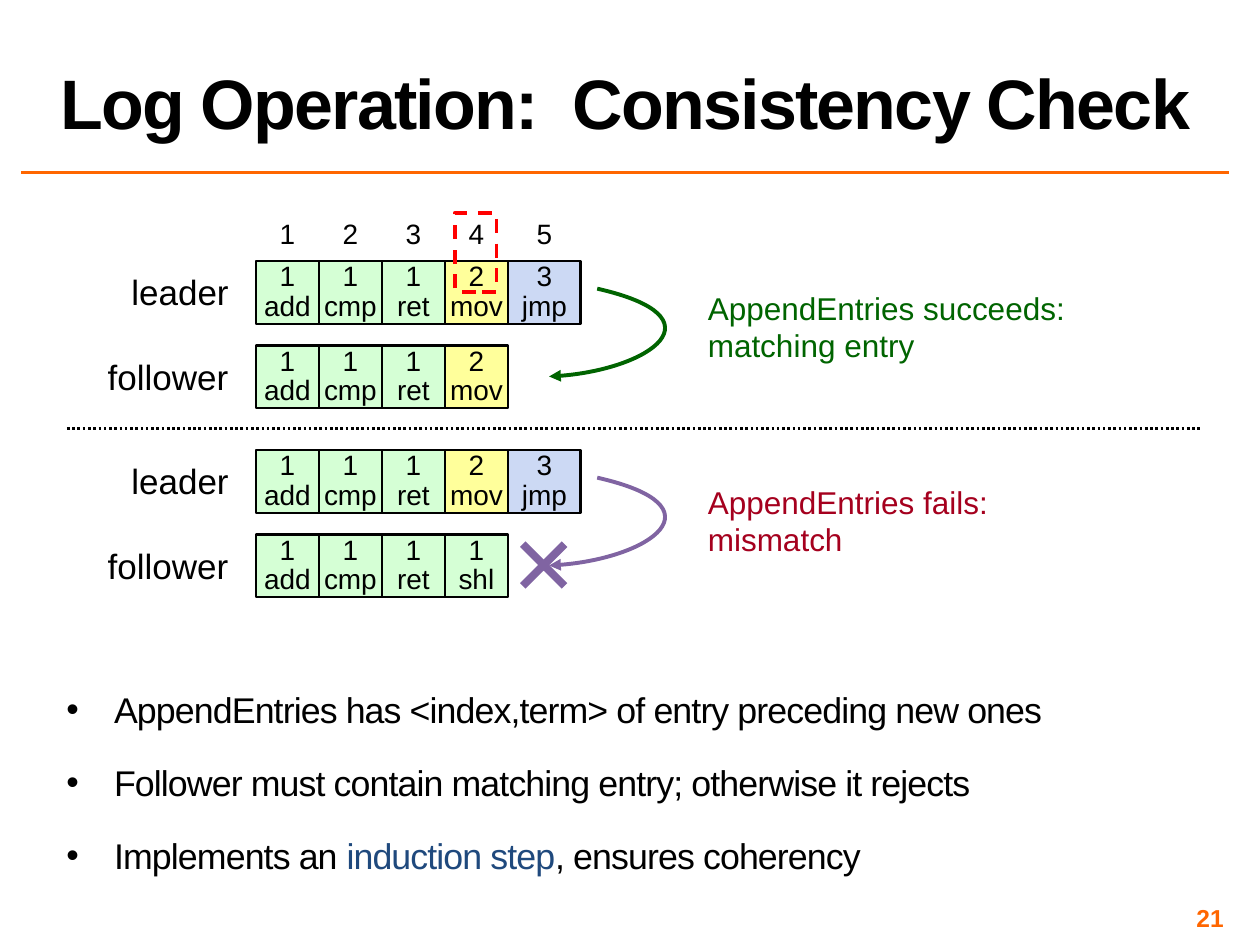
from lxml.etree import SubElement
from pptx import Presentation
from pptx.dml.color import RGBColor
from pptx.enum.dml import MSO_LINE
from pptx.enum.shapes import MSO_CONNECTOR, MSO_SHAPE
from pptx.enum.text import MSO_ANCHOR, PP_ALIGN
from pptx.oxml.ns import qn
from pptx.util import Cm, Pt

BLACK = RGBColor(0x00, 0x00, 0x00)
ORANGE = RGBColor(0xFF, 0x66, 0x00)
GREEN = RGBColor(0x00, 0x64, 0x00)
PURPLE = RGBColor(0x80, 0x64, 0xA2)
CRIMSON = RGBColor(0xA5, 0x00, 0x1E)
RED = RGBColor(0xFF, 0x00, 0x00)
NAVY = RGBColor(0x1F, 0x49, 0x7D)
MINT = RGBColor(0xD5, 0xFF, 0xD5)
YELLOW = RGBColor(0xFF, 0xFF, 0x9B)
SKY = RGBColor(0xCC, 0xD9, 0xF4)

# Log grid, in centimetres
LEFT, CELL, LAST = 5.16, 1.27, 1.47
TOP, STEP, CASE = 5.26, 1.7, 3.81
FILLS = {1: MINT, 2: YELLOW, 3: SKY}
LEADER = [(1, "add"), (1, "cmp"), (1, "ret"), (2, "mov"), (3, "jmp")]


def style(run, size, color=BLACK, bold=False, track=0):
    font = run.font
    font.name, font.size, font.bold = "Arial", Pt(size), bold
    font.color.rgb = color
    if track:
        run._r.get_or_add_rPr().set("spc", str(track))


def fill_text(frame, text, size, color=BLACK, align=PP_ALIGN.LEFT, **look):
    for i, line in enumerate(text if isinstance(text, list) else [text]):
        para = frame.add_paragraph() if i else frame.paragraphs[0]
        para.text = line
        para.alignment = align
        for run in para.runs:
            style(run, size, color, **look)


def set_inset(frame, side, edge):
    frame.margin_left = frame.margin_right = Cm(side)
    frame.margin_top = frame.margin_bottom = Cm(edge)


def add_text(slide, box, text, size, color=BLACK, inset=(0.25, 0.13),
             wrap=True, anchor=MSO_ANCHOR.TOP, **look):
    frame = slide.shapes.add_textbox(*map(Cm, box)).text_frame
    frame.word_wrap = wrap
    frame.vertical_anchor = anchor
    set_inset(frame, *inset)
    fill_text(frame, text, size, color, **look)
    return frame


def add_rect(slide, box, fill, color, width):
    shape = slide.shapes.add_shape(MSO_SHAPE.RECTANGLE, *map(Cm, box))
    shape.shadow.inherit = False
    if fill is None:
        shape.fill.background()
    else:
        shape.fill.solid()
        shape.fill.fore_color.rgb = fill
    shape.line.color.rgb = color
    shape.line.width = Pt(width)
    return shape


def add_line(slide, ends, color, width, dash=None):
    line = slide.shapes.add_connector(MSO_CONNECTOR.STRAIGHT, *map(Cm, ends))
    line.line.color.rgb = color
    line.line.width = Pt(width)
    if dash:
        line.line.dash_style = dash
    SubElement(line._element.spPr, qn("a:effectLst"))


def col_box(col):
    return LEFT + col * CELL, LAST if col == 4 else CELL


def add_row(slide, name, wide, top, items):
    for col, (term, op) in enumerate(items):
        x, width = col_box(col)
        cell = add_rect(slide, (x, top, width, CELL), FILLS[term], BLACK, 1.5)
        frame = cell.text_frame
        set_inset(frame, 0, 0)
        frame.vertical_anchor = MSO_ANCHOR.MIDDLE
        fill_text(frame, f"{term}\v{op}", 16, align=PP_ALIGN.CENTER)
        frame.paragraphs[0].line_spacing = Pt(17)
    add_text(slide, (4.62 - wide, top + 0.2, wide, 0.86), name, 20,
             inset=(0, 0), wrap=False, align=PP_ALIGN.CENTER)


def add_curve(slide, top, color):
    # The outline fixes the frame; one Bezier segment then replaces it
    x, wide, high = 11.07, 2.31, 1.77
    pen = slide.shapes.build_freeform(Cm(x + 0.97), Cm(top))
    pen.add_line_segments([(Cm(x + wide), Cm(top + 0.8)),
                           (Cm(x), Cm(top + high))], close=False)
    shape = pen.convert_to_shape()
    shape.shadow.inherit = False
    shape.fill.background()
    shape.line.color.rgb = color
    shape.line.width = Pt(2.25)
    track = shape._element.spPr.find(".//" + qn("a:path"))
    for seg in track.findall(qn("a:lnTo")):
        track.remove(seg)
    bend = SubElement(track, qn("a:cubicBezTo"))
    for px, py in [(3.53, 0.58), (1.93, 1.7), (0, high)]:
        SubElement(bend, qn("a:pt"), x=str(Cm(px)), y=str(Cm(py)))
    SubElement(shape.line._get_or_add_ln(), qn("a:tailEnd"), type="triangle")


def add_case(slide, top, logs, color, note, box, tint):
    for i, (name, wide, items) in enumerate(logs):
        add_row(slide, name, wide, top + i * STEP, items)
    add_curve(slide, top + 0.56, color)
    add_text(slide, box, note, 18, tint, wrap=False)


def add_list(slide, box, items):
    frame = add_text(slide, box, ["".join(parts) for parts in items], 20.4,
                     inset=(0.1, 0.1))
    for para, parts in zip(frame.paragraphs, items):
        para.text = ""
        for i, part in enumerate(parts):
            run = para.add_run()
            run.text = part
            style(run, 20.4, NAVY if i == 1 else BLACK, track=-50)
        para.line_spacing = 1.1
        para.space_before = Pt(14.8)
        props = para._p.get_or_add_pPr()
        props.set("marL", str(Cm(0.96)))
        props.set("indent", str(Cm(-0.96)))
        SubElement(props, qn("a:buFont"), typeface="Arial")
        SubElement(props, qn("a:buChar"), char="•")


def main():
    deck = Presentation()
    deck.slide_width, deck.slide_height = Cm(25.4), Cm(19.05)
    slide = deck.slides.add_slide(deck.slide_layouts[6])

    # Title, rule and page number
    add_line(slide, (0.43, 3.48, 24.77, 3.48), ORANGE, 2)
    title = add_text(slide, (0.97, 0.05, 23.8, 2.97),
                     "Log Operation:  Consistency Check", 40,
                     anchor=MSO_ANCHOR.BOTTOM, bold=True, track=-100)
    title.paragraphs[0].line_spacing = 0.8
    add_text(slide, (18.85, 18.21, 5.92, 0.58), "21", 14, ORANGE,
             inset=(0.1, 0.1), anchor=MSO_ANCHOR.MIDDLE,
             align=PP_ALIGN.RIGHT, bold=True)

    # Log indexes
    for col in range(5):
        x, width = col_box(col)
        add_text(slide, (x, 4.24, width, 0.94), str(col + 1), 16,
                 align=PP_ALIGN.CENTER)

    # Matching and mismatched logs
    lead = ("leader", 1.98, LEADER)
    add_case(slide, TOP, [lead, ("follower", 2.46, LEADER[:4])], GREEN,
             ["AppendEntries succeeds:", "matching entry"],
             (14.02, 5.69, 7.77, 1.8), GREEN)
    add_line(slide, (1.35, 8.64, 24.21, 8.64), BLACK, 1.5,
             MSO_LINE.ROUND_DOT)
    short = LEADER[:3] + [(1, "shl")]
    add_case(slide, TOP + CASE, [lead, ("follower", 2.46, short)], PURPLE,
             ["AppendEntries fails:", "mismatch"],
             (14.02, 9.6, 6.22, 1.8), CRIMSON)

    # Reject cross and checked entry
    for y, end in [(10.97, 11.81), (11.81, 10.97)]:
        add_line(slide, (10.54, y, 11.38, end), PURPLE, 4.5)
    mark = add_rect(slide, (9.17, 4.29, 0.84, 1.6), None, RED, 2)
    mark.line.dash_style = MSO_LINE.DASH

    # Key points
    add_list(slide, (1.24, 13.67, 23.52, 4.06), [
        ["AppendEntries has <index,term> of entry preceding new ones"],
        ["Follower must contain matching entry; otherwise it rejects"],
        ["Implements an ", "induction step", ", ensures coherency"],
    ])
    deck.save("out.pptx")


if __name__ == "__main__":
    main()
